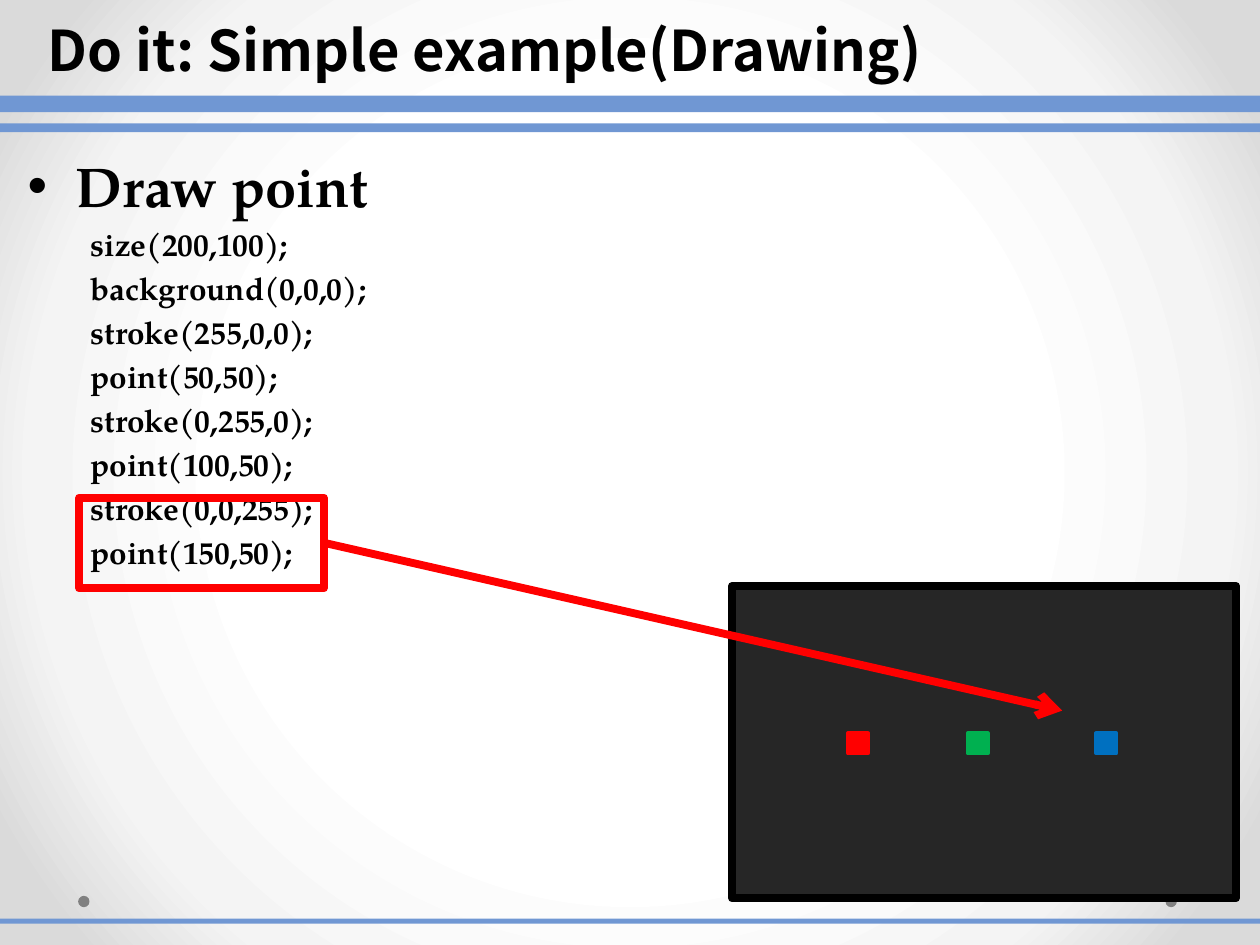
import lxml.etree
import pptx
import pptx.dml.color
import pptx.enum.shapes
import pptx.enum.text
import pptx.oxml
import pptx.oxml.ns
import pptx.util
from pptx.util import Inches

COLORS = {
    "white": "FFFFFF", "mist": "F4F4F4", "edge": "DADADA",
    "band": "7097D3", "dot": "808080", "black": "000000", "canvas": "262626",
    "red": "FF0000", "green": "00B050", "blue": "0070C0",
}
TITLE_FONT = "Noto Sans CJK KR"
BODY_FONT = "TeX Gyre Pagella"
CODE = [
    "size(200,100);", "background(0,0,0);",
    "stroke(255,0,0);", "point(50,50);",
    "stroke(0,255,0);", "point(100,50);",
    "stroke(0,0,255);", "point(150,50);",
]


def rgb(name):
    return pptx.dml.color.RGBColor.from_string(COLORS[name])


def place(shape, box):
    shape.left, shape.top, shape.width, shape.height = map(Inches, box)


def add_shape(page, box, fill=None, line=None, weight=4.5, kind="RECTANGLE"):
    preset = getattr(pptx.enum.shapes.MSO_SHAPE, kind)
    shape = page.shapes.add_shape(preset, *map(Inches, box))
    shape.shadow.inherit = False
    if fill:
        shape.fill.solid()
        shape.fill.fore_color.rgb = rgb(fill)
    else:
        shape.fill.background()
    if line:
        shape.line.color.rgb = rgb(line)
        shape.line.width = pptx.util.Pt(weight)
    else:
        shape.line.fill.background()
    return shape


def set_font(paragraph, name, size):
    paragraph.font.name = name
    paragraph.font.size = pptx.util.Pt(size)
    paragraph.font.bold = True
    paragraph.font.color.rgb = rgb("black")


def set_indent(paragraph, margin, first):
    properties = paragraph._p.get_or_add_pPr()
    properties.set("marL", str(Inches(margin)))
    properties.set("indent", str(Inches(first)))
    return properties


def paint_background(page):
    stops = "".join(
        f'<a:gs pos="{position}000"><a:srgbClr val="{COLORS[name]}"/></a:gs>'
        for position, name in ((50, "white"), (76, "mist"), (92, "edge")))
    gradient = pptx.oxml.parse_xml(
        f'<a:gradFill {pptx.oxml.ns.nsdecls("a")} rotWithShape="1">'
        f'<a:gsLst>{stops}</a:gsLst><a:path path="circle">'
        '<a:fillToRect l="50000" t="50000" r="50000" b="50000"/>'
        '</a:path></a:gradFill>')
    page.background.fill.solid()
    solid = page._element.find(".//" + pptx.oxml.ns.qn("p:bgPr"))[0]
    solid.getparent().replace(solid, gradient)


def add_frame(page, box):
    left, top, width, height = box
    for x in (9.25, 0.62):
        add_shape(page, (left + x, top + 7.11, 0.09, 0.09), "dot", kind="OVAL")
    for y, thickness in ((0.76, 0.13), (0.98, 0.07), (7.29, 0.04)):
        add_shape(page, (left, top + y, width, thickness), "band")


def fill_title(page, box):
    title = page.shapes.title
    place(title, box)
    frame = title.text_frame
    frame.text = "Do it: Simple example(Drawing)"
    frame.word_wrap = False
    frame.auto_size = pptx.enum.text.MSO_AUTO_SIZE.NONE
    frame.vertical_anchor = pptx.enum.text.MSO_ANCHOR.MIDDLE
    paragraph = frame.paragraphs[0]
    paragraph.alignment = pptx.enum.text.PP_ALIGN.LEFT
    set_font(paragraph, TITLE_FONT, 32)


def fill_body(page, box):
    body = page.placeholders[1]
    place(body, box)
    frame = body.text_frame
    frame.auto_size = pptx.enum.text.MSO_AUTO_SIZE.NONE
    heading = frame.paragraphs[0]
    heading.text = "Draw point"
    set_indent(heading, 0.38, -0.38)
    set_font(heading, BODY_FONT, 32)
    for statement in CODE:
        paragraph = frame.add_paragraph()
        paragraph.text = statement
        paragraph.level = 1
        properties = set_indent(paragraph, 0.5, 0)
        lxml.etree.SubElement(properties, pptx.oxml.ns.qn("a:buNone"))
        set_font(paragraph, BODY_FONT, 18)


def add_canvas(page, box):
    add_shape(page, box, "canvas", "black")


def add_points(page, box):
    left, top = box[:2]
    for x, color in ((0.92, "red"), (1.87, "green"), (2.89, "blue")):
        add_shape(page, (left + x, top + 1.17, 0.16, 0.16), color, color, 2.25)


def add_arrow(page, start, end):
    arrow = page.shapes.add_connector(
        pptx.enum.shapes.MSO_CONNECTOR.STRAIGHT, *map(Inches, start + end))
    arrow.line.color.rgb = rgb("red")
    arrow.line.width = pptx.util.Pt(4.5)
    qn = pptx.oxml.ns.qn
    lxml.etree.SubElement(arrow.line._get_or_add_ln(), qn("a:tailEnd"), type="arrow")
    lxml.etree.SubElement(arrow._element.spPr, qn("a:effectLst"))


def main():
    deck = pptx.Presentation()
    deck.slide_width, deck.slide_height = Inches(10), Inches(7.5)
    page = deck.slides.add_slide(deck.slide_layouts[1])
    canvas = (5.81, 4.65, 4, 2.48)
    paint_background(page)
    add_frame(page, (0, 0, 10, 7.5))
    fill_title(page, (0.28, 0.07, 7.8, 0.64))
    fill_body(page, (0.12, 1.15, 9.76, 5.98))
    add_shape(page, (0.63, 3.95, 1.94, 0.72), line="red")
    add_canvas(page, canvas)
    add_arrow(page, (2.58, 4.31), (8.43, 5.64))
    add_points(page, canvas)
    deck.save("out.pptx")


if __name__ == "__main__":
    main()
